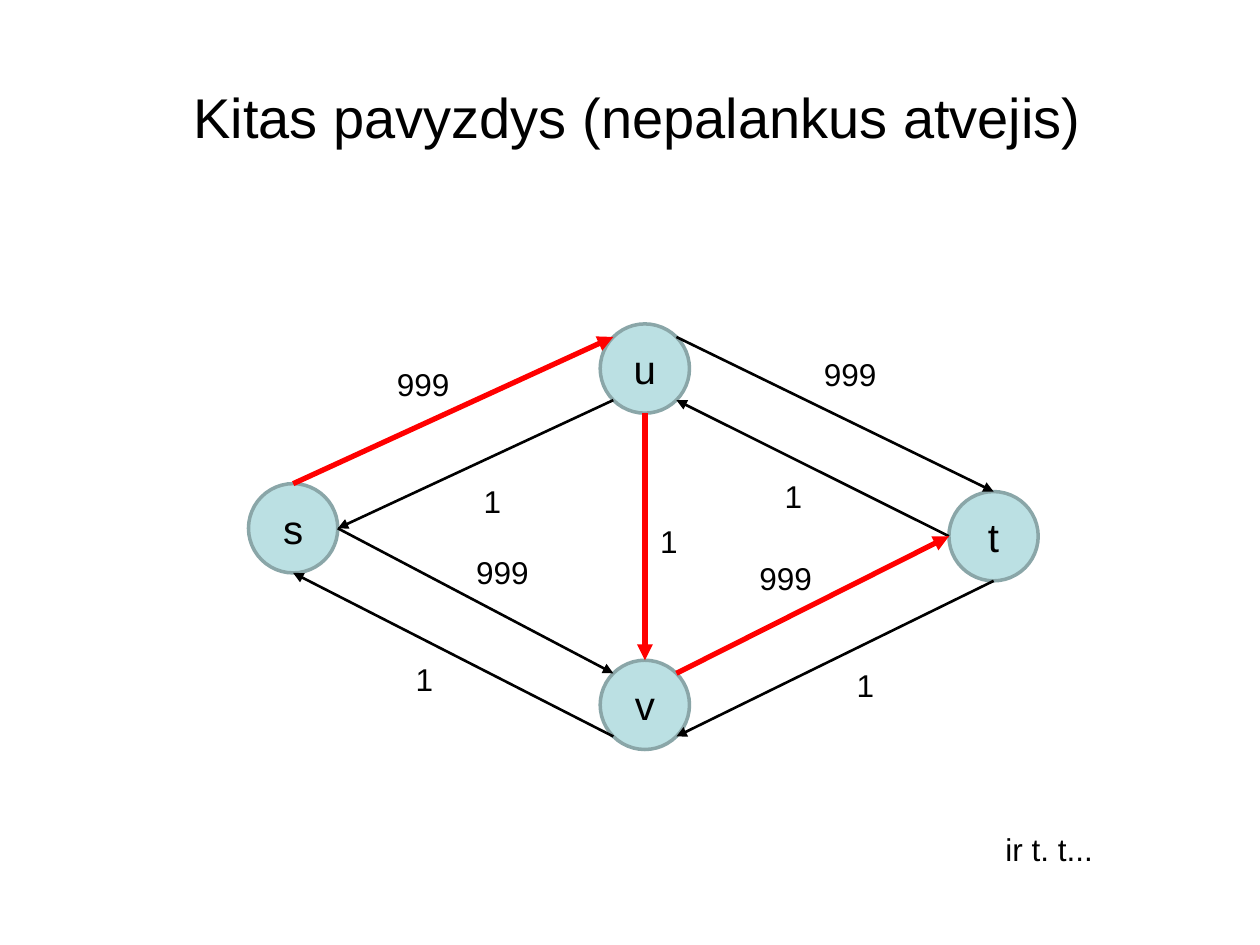
import pptx
import pptx.util
import pptx.dml.color
import pptx.enum.shapes
import pptx.enum.text
import pptx.oxml.ns
import lxml.etree

Cm = pptx.util.Cm
Pt = pptx.util.Pt
RGBColor = pptx.dml.color.RGBColor
ALIGN = pptx.enum.text.PP_ALIGN
ANCHOR = pptx.enum.text.MSO_ANCHOR

BLACK = RGBColor(0x00, 0x00, 0x00)
RED = RGBColor(0xFF, 0x00, 0x00)
AQUA = RGBColor(0xBB, 0xE0, 0xE3)
GREY = RGBColor(0x8A, 0xA6, 0xA8)

SIZE = 1.8
DIAG = 0.5 ** 0.5
SIDES = {
    "N": (0, -1), "S": (0, 1), "W": (-1, 0), "E": (1, 0),
    "NW": (-DIAG, -DIAG), "NE": (DIAG, -DIAG),
    "SW": (-DIAG, DIAG), "SE": (DIAG, DIAG),
}
NODES = {"u": (13, 7.43), "v": (13, 14.21), "s": (5.91, 10.65), "t": (20.03, 10.81)}
EDGES = [
    ("s", "E", "v", "NW", BLACK),
    ("u", "NE", "t", "N", BLACK),
    ("u", "SW", "s", "E", BLACK),
    ("t", "S", "v", "SE", BLACK),
    ("v", "SW", "s", "S", BLACK),
    ("t", "W", "u", "SE", BLACK),
    ("s", "N", "u", "NW", RED),
    ("v", "NE", "t", "W", RED),
    ("u", "S", "v", "N", RED),
]
LABELS = [
    ("999", 7.75, 7.24, 1.58),
    ("999", 9.35, 11.02, 1.58),
    ("999", 16.36, 7.04, 1.58),
    ("999", 15.06, 11.15, 1.58),
    ("1", 9.5, 9.6, 0.87),
    ("1", 8.13, 13.18, 0.87),
    ("1", 15.57, 9.5, 0.87),
    ("1", 13.06, 10.39, 0.87),
    ("1", 17.02, 13.31, 0.87),
    ("ir t. t...", 20.02, 16.61, 2.46),
]


def add_run(frame, text, size, align):
    para = frame.paragraphs[0]
    para.alignment = align
    run = para.add_run()
    run.text = text
    run.font.name = "Arial"
    run.font.size = Pt(size)
    run.font.color.rgb = BLACK


def add_title(slide, text):
    box = slide.shapes.add_textbox(Cm(1.27), Cm(0.76), Cm(22.86), Cm(3.18))
    frame = box.text_frame
    frame.word_wrap = True
    frame.vertical_anchor = ANCHOR.MIDDLE
    add_run(frame, text, 32, ALIGN.CENTER)


def add_node(slide, name, x, y):
    node = slide.shapes.add_shape(
        pptx.enum.shapes.MSO_SHAPE.OVAL,
        Cm(x - SIZE / 2), Cm(y - SIZE / 2), Cm(SIZE), Cm(SIZE))
    node.shadow.inherit = False
    node.fill.solid()
    node.fill.fore_color.rgb = AQUA
    node.line.color.rgb = GREY
    node.line.width = Pt(2)
    node.text_frame.vertical_anchor = ANCHOR.MIDDLE
    add_run(node.text_frame, name, 23, ALIGN.CENTER)


def rim(name, side):
    x, y = NODES[name]
    dx, dy = SIDES[side]
    return Cm(x + dx * SIZE / 2), Cm(y + dy * SIZE / 2)


def add_edge(slide, tail, exit, head, entry, color):
    edge = slide.shapes.add_connector(
        pptx.enum.shapes.MSO_CONNECTOR.STRAIGHT, *rim(tail, exit), *rim(head, entry))
    edge.line.color.rgb = color
    edge.line.width = Pt(3 if color == RED else 1.5)
    qn = pptx.oxml.ns.qn
    line = edge.line._get_or_add_ln()
    lxml.etree.SubElement(line, qn("a:tailEnd"), type="triangle")
    lxml.etree.SubElement(edge._element.spPr, qn("a:effectLst"))


def add_label(slide, text, x, y, width):
    box = slide.shapes.add_textbox(Cm(x), Cm(y), Cm(width), Cm(1.02))
    frame = box.text_frame
    frame.word_wrap = False
    frame.auto_size = pptx.enum.text.MSO_AUTO_SIZE.SHAPE_TO_FIT_TEXT
    add_run(frame, text, 18, ALIGN.LEFT)


def main():
    deck = pptx.Presentation()
    deck.slide_width = Cm(25.4)
    deck.slide_height = Cm(19.05)
    slide = deck.slides.add_slide(deck.slide_layouts[6])
    add_title(slide, " Kitas pavyzdys (nepalankus atvejis)")
    for name, (x, y) in NODES.items():
        add_node(slide, name, x, y)
    for edge in EDGES:
        add_edge(slide, *edge)
    for label in LABELS:
        add_label(slide, *label)
    deck.save("out.pptx")


if __name__ == "__main__":
    main()
